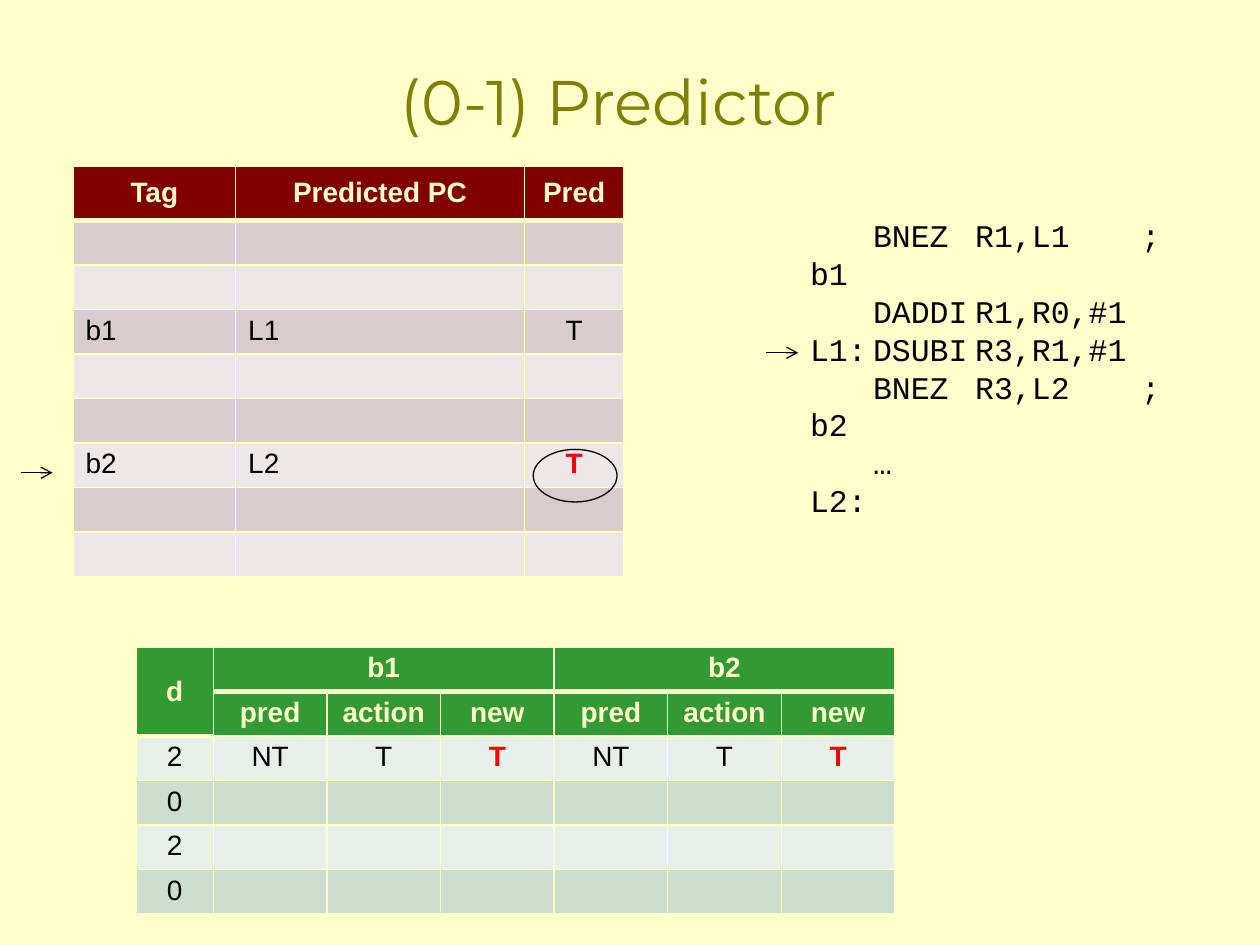
from dataclasses import dataclass

from lxml import etree
from pptx import Presentation
from pptx.dml.color import RGBColor as Rgb
from pptx.enum.shapes import MSO_CONNECTOR as Connector, MSO_SHAPE as Shape
from pptx.enum.text import MSO_ANCHOR as Anchor, PP_ALIGN as Align
from pptx.oxml.ns import qn
from pptx.util import Cm, Pt


@dataclass(frozen=True)
class Theme:
    paper: str = "FFFFCC"
    title: str = "808000"
    ink: str = "000000"
    update: str = "FF0000"
    maroon: tuple = ("800000", "D8CCCC", "EDE7E7")  # header, then the two bands
    green: tuple = ("339933", "E8EFE8", "CEDECE")
    title_font: str = "Montserrat"
    table_font: str = "Arial"
    code_font: str = "Courier New"
    title_size: int = 36
    code_size: int = 18
    table_size: int = 16
    thin: float = 1
    thick: float = 3
    stroke: float = 0.75


def add_xml(parent, tag, **attributes):
    return etree.SubElement(parent, qn(tag), attributes)


class SlideBuilder:
    def __init__(self, slide, theme):
        self.slide = slide
        self.theme = theme
        slide.background.fill.solid()
        slide.background.fill.fore_color.rgb = Rgb.from_string(theme.paper)

    def format_runs(self, paragraph, font, size, color, bold=False):
        for run in paragraph.runs:
            run.font.name = font
            run.font.size = Pt(size)
            run.font.bold = bold
            run.font.color.rgb = Rgb.from_string(color)

    def text(self, box, content, font, size, color, align=Align.LEFT,
             anchor=Anchor.TOP, tabs=()):
        frame = self.slide.shapes.add_textbox(*map(Cm, box)).text_frame
        frame.word_wrap = True
        frame.vertical_anchor = anchor
        frame.text = content
        for paragraph in frame.paragraphs:
            paragraph.alignment = align
            self.format_runs(paragraph, font, size, color)
            if tabs:
                stops = add_xml(paragraph._p.get_or_add_pPr(), "a:tabLst")
                for stop in tabs:
                    add_xml(stops, "a:tab", pos=str(Cm(stop)), algn="l")

    def borders(self, cell, top, bottom):
        properties = cell._tc.get_or_add_tcPr()
        widths = {"a:lnL": self.theme.thin, "a:lnR": self.theme.thin,
                  "a:lnT": top, "a:lnB": bottom}
        for side, width in widths.items():
            line = add_xml(properties, side, w=str(Pt(width)))
            add_xml(add_xml(line, "a:solidFill"), "a:srgbClr", val=self.theme.paper)

    def table(self, left, top, widths, heights, rows, palette, header_rows=1,
              merges=(), heavy=(), middle=(), left_columns=(), updates=()):
        """heavy, middle and updates hold (row, column) places."""
        theme = self.theme
        header_fill, *bands = palette
        table = self.slide.shapes.add_table(
            len(rows), len(widths), Cm(left), Cm(top),
            Cm(sum(widths)), Cm(sum(heights))).table
        table.first_row = table.horz_banding = False
        for column, width in zip(table.columns, widths):
            column.width = Cm(width)
        for row, height in zip(table.rows, heights):
            row.height = Cm(height)

        for r, row in enumerate(rows):
            header = r < header_rows
            fill = header_fill if header else bands[(r - header_rows) % 2]
            for c, content in enumerate(row):
                cell = table.cell(r, c)
                place = (r, c)
                self.borders(cell,
                             theme.thick if (r - 1, c) in heavy else theme.thin,
                             theme.thick if place in heavy else theme.thin)
                cell.fill.solid()
                cell.fill.fore_color.rgb = Rgb.from_string(fill)
                cell.margin_top = cell.margin_bottom = Cm(0.11)
                cell.vertical_anchor = Anchor.MIDDLE if place in middle else Anchor.TOP
                cell.text_frame.text = content
                paragraph = cell.text_frame.paragraphs[0]
                aligned_left = not header and c in left_columns
                paragraph.alignment = Align.LEFT if aligned_left else Align.CENTER
                color = (theme.paper if header
                         else theme.update if place in updates else theme.ink)
                self.format_runs(paragraph, theme.table_font, theme.table_size,
                                 color, header or place in updates)
                if not content:  # keeps empty rows at the height of the others
                    add_xml(paragraph._p, "a:endParaRPr", sz=str(theme.table_size * 100))
        for first, last in merges:
            table.cell(*first).merge(table.cell(*last))

    def arrow(self, left, y, length):
        arrow = self.slide.shapes.add_connector(
            Connector.STRAIGHT, Cm(left), Cm(y), Cm(left + length), Cm(y))
        self.stroke(arrow)
        add_xml(arrow.line._get_or_add_ln(), "a:tailEnd", type="arrow")
        add_xml(arrow._element.spPr, "a:effectLst")

    def ring(self, box):
        ring = self.slide.shapes.add_shape(Shape.OVAL, *map(Cm, box))
        ring.shadow.inherit = False
        ring.fill.background()
        self.stroke(ring)

    def stroke(self, drawn):
        drawn.line.color.rgb = Rgb.from_string(self.theme.ink)
        drawn.line.width = Pt(self.theme.stroke)


def main():
    deck = Presentation()
    deck.slide_width, deck.slide_height = Cm(25.4), Cm(19.05)
    theme = Theme()
    builder = SlideBuilder(deck.slides.add_slide(deck.slide_layouts[6]), theme)
    row_height = 0.88

    builder.text((1.47, 0.43, 22.02, 3.18), "(0-1) Predictor", theme.title_font,
                 theme.title_size, theme.title, Align.CENTER, Anchor.MIDDLE)

    buffer_header = ["Tag", "Predicted PC", "Pred"]
    buffer_entries = {2: ["b1", "L1", "T"], 5: ["b2", "L2", "T"]}
    buffer_rows = [buffer_header] + [buffer_entries.get(i, [""] * 3) for i in range(8)]
    header_places = [(0, c) for c in range(3)]
    builder.table(1.47, 3.35, [3.28, 5.82, 2.01], [1.09] + [row_height] * 8,
                  buffer_rows, theme.maroon, heavy=header_places,
                  middle=header_places, left_columns=(0, 1), updates=[(6, 2)])

    branch_step = ["NT", "T", "T"]
    history_rows = [
        ["d", "b1", "", "", "b2", "", ""],
        [""] + ["pred", "action", "new"] * 2,
        ["2"] + branch_step * 2,
    ] + [[d] + [""] * 6 for d in "020"]
    builder.table(2.74, 13.04, [1.56] + [2.29] * 6, [row_height] * 6,
                  history_rows, theme.green, header_rows=2,
                  merges=[((0, 0), (1, 0)), ((0, 1), (0, 3)), ((0, 4), (0, 6))],
                  heavy=[(0, c) for c in range(7)] + [(1, 0)],
                  middle=[(0, 0)], updates=[(2, 3), (2, 6)])

    code = "\n".join([
        "\tBNEZ\tR1,L1\t; b1",
        " \tDADDI\tR1,R0,#1",
        "L1:\tDSUBI\tR3,R1,#1",
        "\tBNEZ\tR3,L2\t; b2",
        "\t…",
        "L2:",
    ])
    builder.text((16.08, 4.24, 8.68, 4.88), code, theme.code_font, theme.code_size,
                 theme.ink, tabs=(1.27, 3.33, 6.68))

    for left, y in ((15.45, 7.11), (0.42, 9.53)):
        builder.arrow(left, y, 0.64)
    builder.ring((10.75, 9.06, 1.69, 1.06))

    deck.save("out.pptx")


if __name__ == "__main__":
    main()
